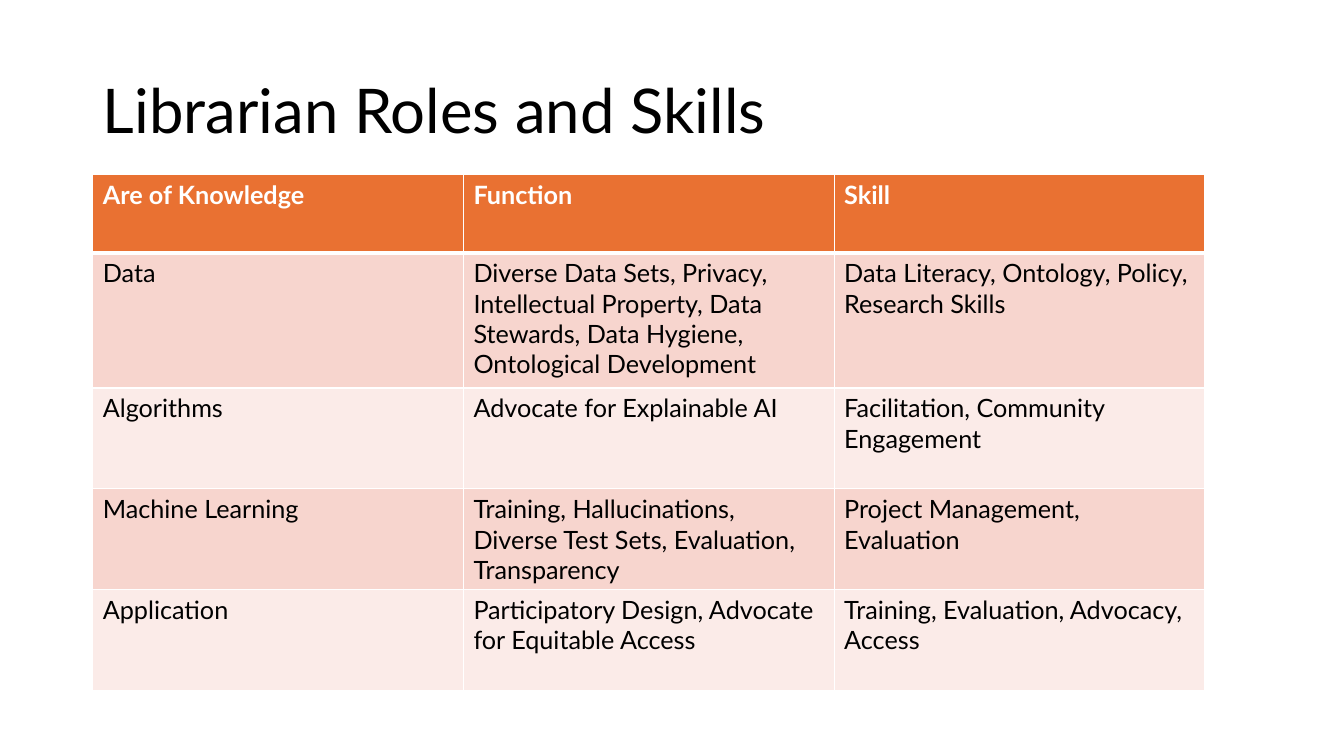
from lxml.etree import SubElement
from pptx import Presentation
from pptx.dml.color import RGBColor
from pptx.enum.text import MSO_ANCHOR as Anchor, PP_ALIGN as Align
from pptx.oxml.ns import qn
from pptx.util import Inches, Pt

BLACK = RGBColor(0x00, 0x00, 0x00)
WHITE = RGBColor(0xFF, 0xFF, 0xFF)
ORANGE = RGBColor(0xE9, 0x71, 0x32)
ROSE = RGBColor(0xF7, 0xD5, 0xCE)
BLUSH = RGBColor(0xFB, 0xEB, 0xE8)

COLUMNS, ROWS = 1333, 750

ROLES = [
    ("Are of Knowledge", "Function", "Skill"),
    ("Data",
     "Diverse Data Sets, Privacy, Intellectual Property, Data Stewards, "
     "Data Hygiene, Ontological Development",
     "Data Literacy, Ontology, Policy, Research Skills"),
    ("Algorithms", "Advocate for Explainable AI",
     "Facilitation, Community Engagement"),
    ("Machine Learning",
     "Training, Hallucinations, Diverse Test Sets, Evaluation, Transparency",
     "Project Management, Evaluation"),
    ("Application",
     "Participatory Design, Advocate for Equitable Access",
     "Training, Evaluation, Advocacy, Access"),
]
ROLE_HEIGHTS = [78, 134, 100, 100, 100]


class Deck:
    font = "Lato"
    title_size = Pt(44)
    body_size = Pt(18)

    def __init__(self):
        self.deck = Presentation()
        self.deck.slide_width = Inches(13.33)
        self.deck.slide_height = Inches(7.5)
        self.slide = self.deck.slides.add_slide(self.deck.slide_layouts[5])

    def x(self, columns):
        return round(self.deck.slide_width * columns / COLUMNS)

    def y(self, rows):
        return round(self.deck.slide_height * rows / ROWS)

    def style(self, paragraph, size, color, bold=False):
        paragraph.font.name = self.font
        paragraph.font.size = size
        paragraph.font.color.rgb = color
        paragraph.font.bold = bold

    def title(self, wording, left, top, width, height):
        heading = self.slide.shapes.title
        heading.left, heading.top = self.x(left), self.y(top)
        heading.width, heading.height = self.x(width), self.y(height)
        heading.text_frame.text = wording
        heading.text_frame.vertical_anchor = Anchor.MIDDLE
        line = heading.text_frame.paragraphs[0]
        line.alignment = Align.LEFT
        line.line_spacing = 0.9
        self.style(line, self.title_size, BLACK)

    def borders(self, cell, top, bottom):
        properties = cell._tc.get_or_add_tcPr()
        weights = {"lnL": 1, "lnR": 1, "lnT": top, "lnB": bottom}
        for side, weight in weights.items():
            edge = SubElement(properties, qn(f"a:{side}"), w=str(Pt(weight)))
            paint = SubElement(edge, qn("a:solidFill"))
            SubElement(paint, qn("a:srgbClr"), val=str(WHITE))

    def cell(self, cell, wording, row):
        header = row == 0
        self.borders(cell, 3 if row == 1 else 1, 3 if header else 1)
        cell.fill.solid()
        cell.fill.fore_color.rgb = ORANGE if header else ROSE if row % 2 else BLUSH
        cell.text = wording
        self.style(cell.text_frame.paragraphs[0], self.body_size,
                   WHITE if header else BLACK, header)

    def table(self, records, heights, left, top, width):
        count = len(records[0])
        table = self.slide.shapes.add_table(
            len(records), count, self.x(left), self.y(top),
            self.x(width), self.y(sum(heights))).table
        for column in table.columns:
            column.width = self.x(width / count)
        for row, (record, height) in enumerate(zip(records, heights)):
            table.rows[row].height = self.y(height)
            for column, wording in enumerate(record):
                self.cell(table.cell(row, column), wording, row)

    def save(self):
        self.deck.save("out.pptx")


def main():
    deck = Deck()
    deck.title("Librarian Roles and Skills", 92, 40, 1150, 145)
    deck.table(ROLES, ROLE_HEIGHTS, 92, 173, 1103)
    deck.save()


if __name__ == "__main__":
    main()
